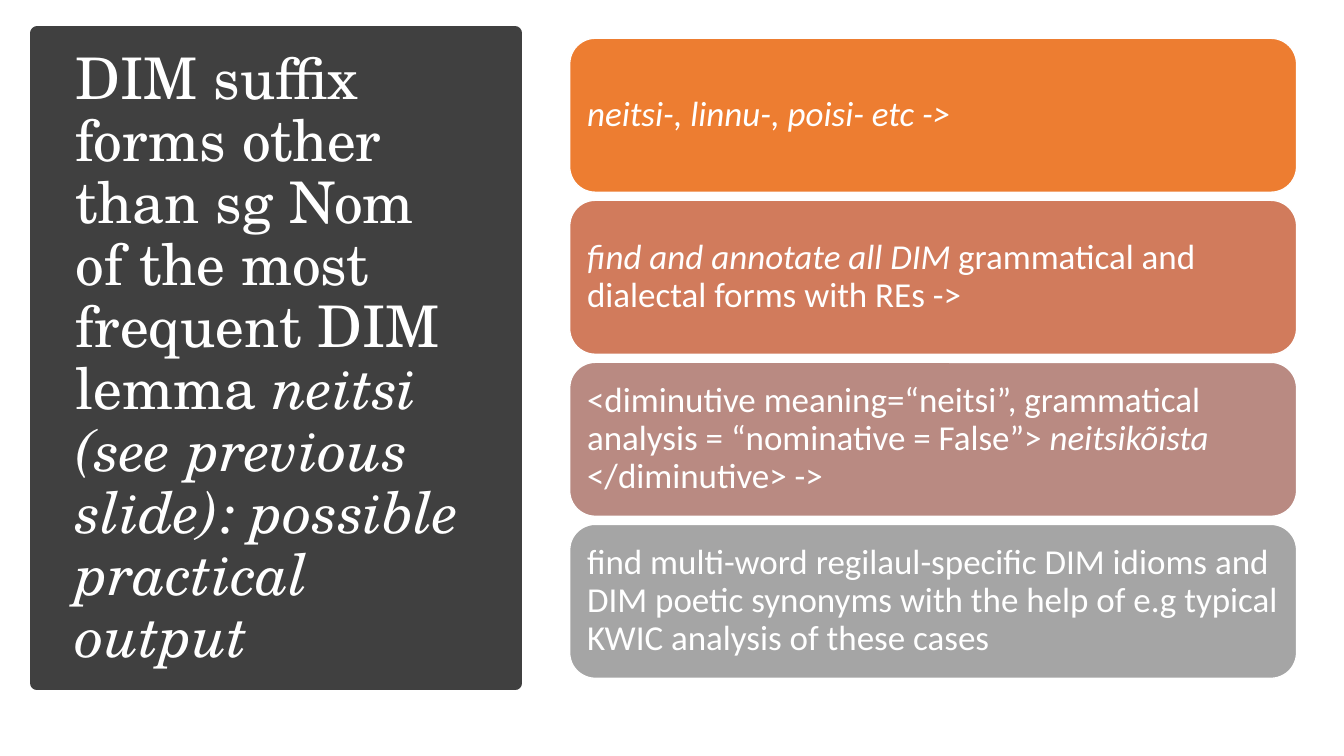
from pptx import Presentation
from pptx.dml.color import RGBColor
from pptx.enum.shapes import MSO_SHAPE
from pptx.enum.text import MSO_ANCHOR, MSO_AUTO_SIZE, PP_ALIGN
from pptx.util import Inches, Pt

RECT, ROUND = MSO_SHAPE.RECTANGLE, MSO_SHAPE.ROUNDED_RECTANGLE
MIDDLE, LEFT, NOFIT = MSO_ANCHOR.MIDDLE, PP_ALIGN.LEFT, MSO_AUTO_SIZE.NONE

WHITE = RGBColor(0xFF, 0xFF, 0xFF)
DARK = RGBColor(0x40, 0x40, 0x40)
ORANGE = RGBColor(0xED, 0x7D, 0x31)
CORAL = RGBColor(0xD1, 0x7B, 0x5C)
ROSE = RGBColor(0xB9, 0x8A, 0x82)
GRAY = RGBColor(0xA5, 0xA5, 0xA5)

WIDE, HIGH = 13.33, 7.5
PANEL = (0.37, 0.33, 4.74, 6.45)
STACK = (5.65, 0.38, 7.21, 6.35)
GAP = 0.08

# Each text is a list of (words, italic) runs.
TITLE = [
    ("DIM suffix forms other than sg Nom of the most frequent DIM lemma ", False),
    ("neitsi (see previous slide): possible practical output", True),
]
STEPS = [
    (ORANGE, [("neitsi-, linnu-, poisi- etc ->", True)]),
    (CORAL, [("find and annotate all DIM ", True),
             ("grammatical and dialectal forms with REs ->", False)]),
    (ROSE, [("<diminutive meaning=“neitsi”, grammatical analysis = "
             "“nominative = False”> ", False),
            ("neitsikõista", True),
            (" </diminutive> ->", False)]),
    (GRAY, [("find multi-word regilaul-specific DIM idioms and DIM poetic "
             "synonyms with the help of e.g typical KWIC analysis of these "
             "cases", False)]),
]


def write(shape, runs, size, font, color=WHITE, inset=(0.1, 0.1)):
    frame = shape.text_frame
    frame.word_wrap = True
    frame.auto_size = NOFIT
    frame.vertical_anchor = MIDDLE
    frame.margin_left = frame.margin_right = Inches(inset[0])
    frame.margin_top = frame.margin_bottom = Inches(inset[1])
    para = frame.paragraphs[0]
    para.alignment = LEFT
    para.line_spacing = 0.9
    for words, italic in runs:
        run = para.add_run()
        run.text = words
        run.font.size = Pt(size)
        run.font.name = font
        run.font.italic = italic
        run.font.color.rgb = color


def block(slide, kind, box, fill, line, width):
    shape = slide.shapes.add_shape(kind, *map(Inches, box))
    shape.shadow.inherit = False
    shape.fill.solid()
    shape.fill.fore_color.rgb = fill
    shape.line.color.rgb = line
    shape.line.width = Pt(width)
    return shape


def title_panel(slide, box):
    left, top, width, height = box
    panel = block(slide, RECT, box, DARK, DARK, 10)
    title = slide.shapes.title
    title.element.addprevious(panel.element)  # panel goes behind the title
    title.left, title.top = Inches(left + 0.28), Inches(top + 0.37)
    title.width, title.height = Inches(width - 0.58), Inches(height - 0.7)
    write(title, TITLE, 41, "TeX Gyre Schola", inset=(0.1, 0.05))


def step_stack(slide, box):
    left, top, width, height = box
    pitch = (height + GAP) / len(STEPS)
    for row, (fill, runs) in enumerate(STEPS):
        place = (left, top + row * pitch, width, pitch - GAP)
        card = block(slide, ROUND, place, fill, WHITE, 1)
        write(card, runs, 25, "Calibri")


def main():
    deck = Presentation()
    deck.slide_width, deck.slide_height = Inches(WIDE), Inches(HIGH)
    slide = deck.slides.add_slide(deck.slide_layouts.get_by_name("Title Only"))
    title_panel(slide, PANEL)
    step_stack(slide, STACK)
    deck.save("out.pptx")


if __name__ == "__main__":
    main()
